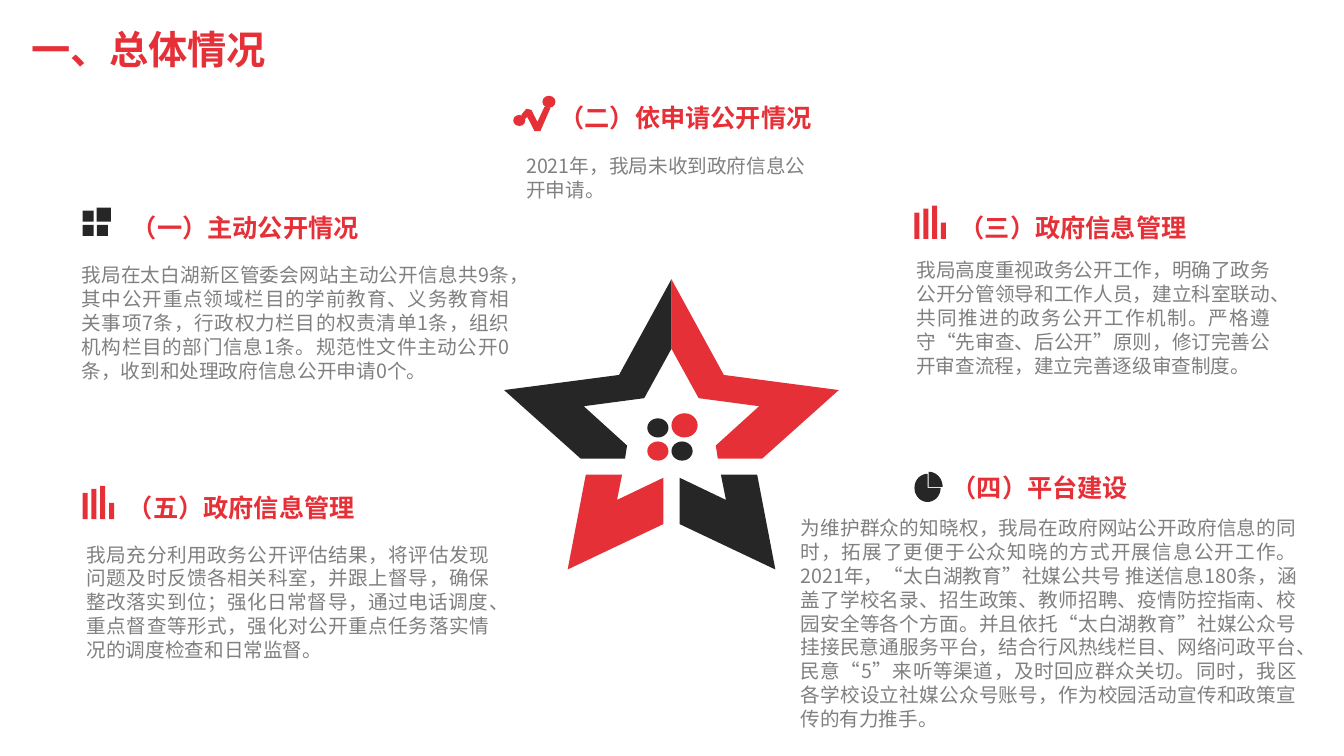
from math import cos, radians, sin

from lxml import etree
from pptx import Presentation
from pptx.dml.color import RGBColor
from pptx.enum.lang import MSO_LANGUAGE_ID
from pptx.enum.shapes import MSO_SHAPE
from pptx.enum.text import MSO_ANCHOR, PP_ALIGN
from pptx.oxml.ns import qn
from pptx.util import Inches, Pt

RECTANGLE, OVAL = MSO_SHAPE.RECTANGLE, MSO_SHAPE.OVAL
JUSTIFY, LEFT = PP_ALIGN.JUSTIFY, PP_ALIGN.LEFT
MIDDLE = MSO_ANCHOR.MIDDLE
CHINESE = MSO_LANGUAGE_ID.SIMPLIFIED_CHINESE


class Theme:
    red = RGBColor(0xE6, 0x30, 0x37)
    dark = RGBColor(0x26, 0x26, 0x26)
    grey = RGBColor(0x80, 0x80, 0x80)
    title_font = "Montserrat"
    text_font = "Noto Sans CJK SC"
    title_size, heading_size, body_size = Pt(28), Pt(18), Pt(14)
    heading_spacing, body_spacing = Pt(33), Pt(17)


# Content: heading, heading box, icon name, icon corner, body, body box
TITLE = "一、总体情况"
SECTIONS = [
    ("（一）主动公开情况", (1.21, 1.9, 2.51, 0.55), "tiles", (0.82, 2.06),
     "我局在太白湖新区管委会网站主动公开信息共9条，其中公开重点领域栏目的学前教育、"
     "义务教育相关事项7条，行政权力栏目的权责清单1条，组织机构栏目的部门信息1条。"
     "规范性文件主动公开0条，收到和处理政府信息公开申请0个。",
     (0.71, 2.56, 4.44, 1.28)),
    ("（二）依申请公开情况", (5.45, 0.81, 3.05, 0.55), "trend", (5.09, 0.95),
     "2021年，我局未收到政府信息公开申请。",
     (5.12, 1.48, 2.97, 0.57)),
    ("（三）政府信息管理", (9.42, 1.9, 2.51, 0.55), "bars", (9.07, 2.04),
     "我局高度重视政务公开工作，明确了政务公开分管领导和工作人员，建立科室联动、"
     "共同推进的政务公开工作机制。严格遵守“先审查、后公开”原则，修订完善公开审查流程，"
     "建立完善逐级审查制度。",
     (8.99, 2.51, 3.71, 1.28)),
    ("（四）平台建设", (9.34, 4.48, 2.26, 0.55), "pie", (9.07, 4.68),
     "为维护群众的知晓权，我局在政府网站公开政府信息的同时，拓展了更便于公众知晓的方式"
     "开展信息公开工作。2021年，“太白湖教育”社媒公共号 推送信息180条，涵盖了学校名录、"
     "招生政策、教师招聘、疫情防控指南、校园安全等各个方面。并且依托“太白湖教育”"
     "社媒公众号挂接民意通服务平台，结合行风热线栏目、网络问政平台、民意“5”来听等渠道，"
     "及时回应群众关切。同时，我区各学校设立社媒公众号账号，作为校园活动宣传和政策宣传的"
     "有力推手。",
     (7.84, 5.07, 5.12, 2.22)),
    ("（五）政府信息管理", (1.17, 4.68, 2.51, 0.55), "bars", (0.82, 4.82),
     "我局充分利用政务公开评估结果，将评估发现问题及时反馈各相关科室，并跟上督导，"
     "确保整改落实到位；强化日常督导，通过电话调度、重点督查等形式，强化对公开重点任务"
     "落实情况的调度检查和日常监督。",
     (0.76, 5.33, 4.19, 1.28)),
]

# Right half of the star; the left half mirrors it with colours swapped
STAR_AXIS = 6.66
STAR_ARM = [(7.18, 3.72), (6.66, 2.77), (6.66, 3.46), (6.93, 3.95), (7.53, 4.03),
            (7.1, 4.42), (7.12, 4.55), (7.56, 4.55), (8.32, 3.87)]
STAR_LEG = [(6.74, 4.74), (6.74, 5.2), (7.69, 5.65), (7.51, 4.71), (7.15, 4.71),
            (7.2, 4.96)]
STAR_DOTS = [((6.42, 4.15, 0.21, 0.19), Theme.dark), ((6.66, 4.1, 0.26, 0.24), Theme.red),
             ((6.42, 4.38, 0.21, 0.19), Theme.red), ((6.66, 4.38, 0.21, 0.19), Theme.dark)]

# Icon parts, measured from the icon's corner
TILES = [(0, 0.03, 0.11), (0.14, 0, 0.14), (0, 0.17, 0.11), (0.14, 0.17, 0.11)]
BAR_HEIGHTS = [0.26, 0.3, 0.33, 0.16]
TREND_LINE = [(0.08, 0.19), (0.13, 0.13), (0.18, 0.14), (0.24, 0.26), (0.31, 0.11),
              (0.37, 0.12), (0.27, 0.35), (0.21, 0.35), (0.14, 0.21), (0.12, 0.23)]
TREND_DOTS = [(0, 0.19, 0.12, 0.11), (0.29, 0, 0.13, 0.12)]


def paint(shape, color):
    shape.shadow.inherit = False
    shape.fill.solid()
    shape.fill.fore_color.rgb = color
    shape.line.fill.background()


def add_preset(shapes, kind, box, color):
    paint(shapes.add_shape(kind, *map(Inches, box)), color)


def add_outline(shapes, points, color):
    points = [(Inches(x), Inches(y)) for x, y in points]
    builder = shapes.build_freeform(*points[0], scale=1.0)
    builder.add_line_segments(points[1:], close=True)
    paint(builder.convert_to_shape(), color)


def sector(center_x, center_y, radius_x, radius_y, start, end):
    arc = [(center_x + radius_x * cos(radians(angle)), center_y + radius_y * sin(radians(angle)))
           for angle in range(start, end + 1, 10)]
    return [(center_x, center_y)] + arc


def write(shape, text, font_name, size, color, bold, spacing, alignment):
    text_frame = shape.text_frame
    text_frame.word_wrap = True
    text_frame.text = text
    paragraph = text_frame.paragraphs[0]
    paragraph.alignment = alignment
    paragraph.line_spacing = spacing
    font = paragraph.runs[0].font
    font.name, font.size, font.bold = font_name, size, bold
    font.color.rgb = color
    font.language_id = CHINESE
    latin = paragraph.runs[0]._r.rPr.find(qn("a:latin"))
    east_asian = etree.Element(qn("a:ea"), typeface=Theme.text_font)
    latin.addnext(east_asian)


def add_icon(shapes, name, left, top):
    if name == "tiles":
        for x, y, side in TILES:
            add_preset(shapes, RECTANGLE, (left + x, top + y, side, side), Theme.dark)
    elif name == "bars":
        base = top + max(BAR_HEIGHTS)
        for index, height in enumerate(BAR_HEIGHTS):
            box = (left + index * 0.087, base - height, 0.05, height)
            add_preset(shapes, RECTANGLE, box, Theme.red)
    elif name == "trend":
        add_outline(shapes, [(left + x, top + y) for x, y in TREND_LINE], Theme.red)
        for x, y, width, height in TREND_DOTS:
            add_preset(shapes, OVAL, (left + x, top + y, width, height), Theme.red)
    elif name == "pie":
        add_outline(shapes, sector(left + 0.13, top + 0.16, 0.13, 0.14, 0, 270), Theme.dark)
        add_outline(shapes, sector(left + 0.14, top + 0.15, 0.14, 0.15, 270, 360), Theme.dark)


presentation = Presentation()
presentation.slide_width, presentation.slide_height = Inches(13.33), Inches(7.5)
slide = presentation.slides.add_slide(presentation.slide_layouts[5])

# Title
title = slide.shapes.title
title.left, title.top, title.width, title.height = map(Inches, (0.21, 0.2, 11.5, 0.62))
write(title, TITLE, Theme.title_font, Theme.title_size, Theme.red, True, 0.9, LEFT)
title.text_frame.vertical_anchor = MIDDLE

# Star emblem
star = slide.shapes.add_group_shape().shapes
for points, right_color, left_color in [(STAR_LEG, Theme.dark, Theme.red),
                                        (STAR_ARM, Theme.red, Theme.dark)]:
    add_outline(star, points, right_color)
    add_outline(star, [(2 * STAR_AXIS - x, y) for x, y in points], left_color)
for box, color in STAR_DOTS:
    add_preset(star, OVAL, box, color)

# Sections: heading with icon, then body text
for heading, heading_box, icon, corner, body, body_box in SECTIONS:
    group = slide.shapes.add_group_shape().shapes
    write(group.add_textbox(*map(Inches, heading_box)), heading, Theme.text_font,
          Theme.heading_size, Theme.red, True, Theme.heading_spacing, JUSTIFY)
    add_icon(group, icon, *corner)
    write(slide.shapes.add_textbox(*map(Inches, body_box)), body, Theme.text_font,
          Theme.body_size, Theme.grey, False, Theme.body_spacing, JUSTIFY)

presentation.save("out.pptx")
